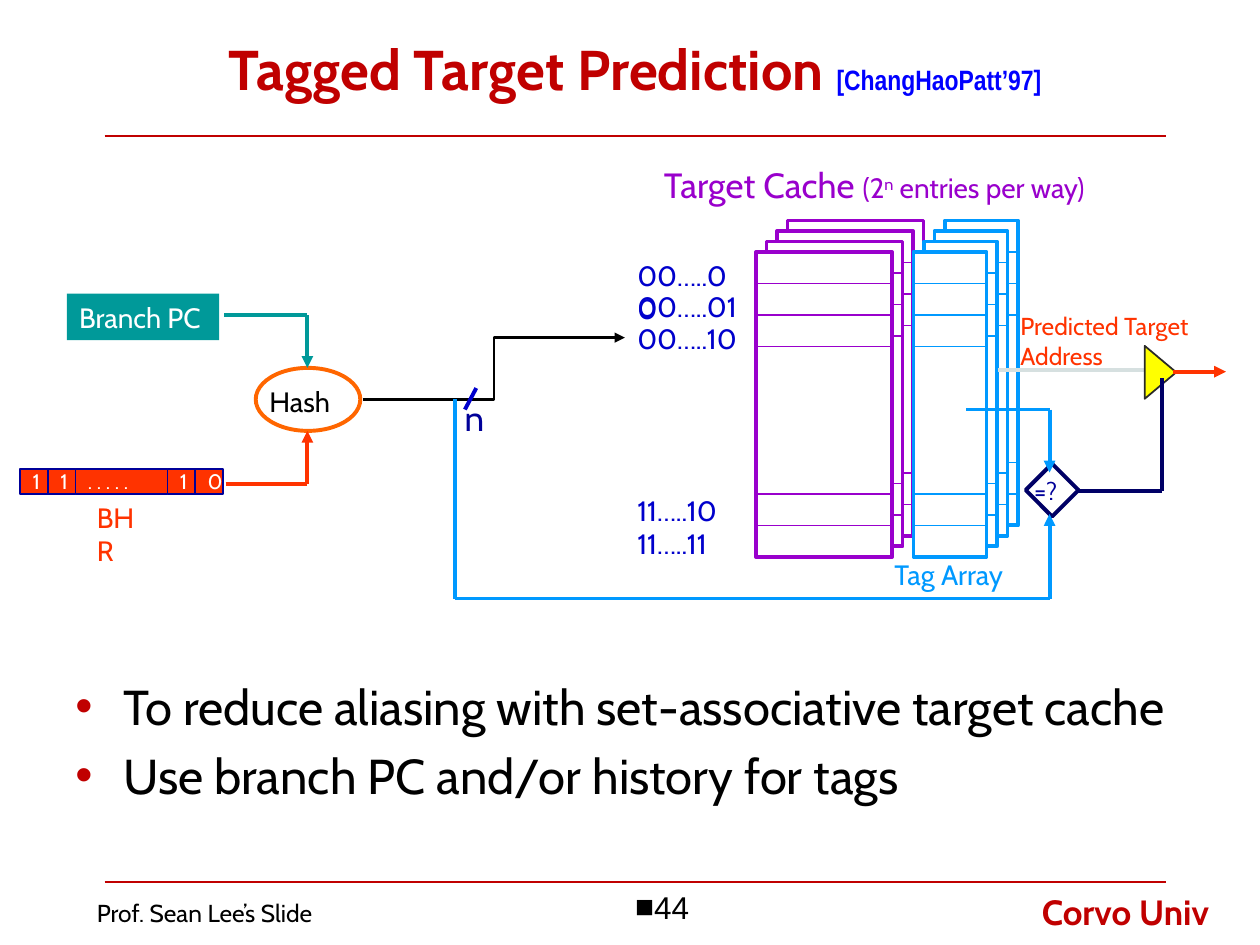
from lxml import etree
from pptx import Presentation
from pptx.dml.color import RGBColor
from pptx.enum.shapes import MSO_CONNECTOR as Route, MSO_SHAPE as Preset
from pptx.enum.text import MSO_ANCHOR as Anchor, MSO_AUTO_SIZE as AutoSize, PP_ALIGN as Align
from pptx.oxml.ns import qn
from pptx.util import Inches, Pt

RED, PURPLE, BLUE = "C00000", "9900CC", "0099FF"
ORANGE, TEAL, NAVY = "FF3300", "009999", "000066"
INDEX_BLUE, TEXT_BLUE = "0000CC", "000099"
BLACK, WHITE = "000000", "FFFFFF"


def rgb(value):
    return RGBColor.from_string(value)


def style(run, size, color, bold=False, font="Cabin"):
    run.font.size = Pt(size)
    run.font.name = font
    run.font.bold = bold
    run.font.color.rgb = rgb(color)


def add_bullet(paragraph, char, color, indent=0):
    props = paragraph._p.get_or_add_pPr()
    props.set("marL", str(Inches(indent)))
    props.set("indent", str(-Inches(indent)))
    bullet_color = etree.SubElement(props, qn("a:buClr"))
    etree.SubElement(bullet_color, qn("a:srgbClr"), val=color)
    etree.SubElement(props, qn("a:buFont"), typeface="Arial")
    etree.SubElement(props, qn("a:buChar"), char=char)


def add_label(slide, box, text, size, color, wrap=False, bold=False, font="Cabin"):
    label = slide.shapes.add_textbox(*map(Inches, box))
    frame = label.text_frame
    frame.text = text
    frame.word_wrap = wrap
    frame.auto_size = AutoSize.SHAPE_TO_FIT_TEXT
    for paragraph in frame.paragraphs:
        for run in paragraph.runs:
            style(run, size, color, bold, font)
    return frame


def add_block(shapes, preset, box, fill=None, line=None, width=2.25):
    block = shapes.add_shape(preset, *map(Inches, box))
    block.shadow.inherit = False
    if fill:
        block.fill.solid()
        block.fill.fore_color.rgb = rgb(fill)
    else:
        block.fill.background()
    if line:
        block.line.color.rgb = rgb(line)
        block.line.width = Pt(width)
    else:
        block.line.fill.background()
    return block


def fill_text(block, text, size, color):
    frame = block.text_frame
    frame.text = text
    frame.margin_right = 0
    frame.vertical_anchor = Anchor.MIDDLE
    frame.paragraphs[0].alignment = Align.LEFT
    style(frame.paragraphs[0].runs[0], size, color)


def add_wire(shapes, start, end, color, width=2.25, arrow=False, route=Route.STRAIGHT):
    wire = shapes.add_connector(route, *map(Inches, start + end))
    wire.line.color.rgb = rgb(color)
    wire.line.width = Pt(width)
    if arrow:
        etree.SubElement(wire.line._get_or_add_ln(), qn("a:tailEnd"), type="triangle")
    etree.SubElement(wire._element.spPr, qn("a:effectLst"))


def add_path(shapes, points, color, arrow=False):
    last = len(points) - 2
    for i, (start, end) in enumerate(zip(points, points[1:])):
        add_wire(shapes, start, end, color, arrow=arrow and i == last)


def add_title(slide):
    title = slide.shapes.title
    title.left, title.top, title.width, title.height = map(Inches, (0.83, 0.08, 8.42, 0.92))
    title.text_frame.vertical_anchor = Anchor.MIDDLE
    heading = title.text_frame.paragraphs[0]
    heading.alignment = Align.CENTER
    name, citation = heading.add_run(), heading.add_run()
    name.text, citation.text = "Tagged Target Prediction ", "[ChangHaoPatt’97]"
    style(name, 32, RED, True)
    style(citation, 16, "0000FF", True, "Arial Narrow")


def add_frame(slide):
    for y in (1.08, 7):
        add_wire(slide.shapes, (0.83, y), (9.25, y), RED, 1.5)
    add_label(slide, (8.17, 7.02, 1.74, 0.44), "Corvo Univ", 20, RED, bold=True)
    add_label(slide, (0.67, 7.08, 2.04, 0.34), "Prof. Sean Lee’s Slide", 14, BLACK)
    number = add_label(slide, (3.67, 7, 3.17, 0.5), "44", 18, BLACK, True, font="Arial")
    number.auto_size = AutoSize.NONE
    number.paragraphs[0].alignment = Align.CENTER
    add_bullet(number.paragraphs[0], "■", BLACK)


def add_way(slide, left, top):
    way = slide.shapes.add_group_shape().shapes
    for offset, width, color in ((0, 1.08, PURPLE), (1.25, 0.58, BLUE)):
        x = left + offset
        add_block(way, Preset.RECTANGLE, (x, top, width, 2.42), WHITE, color)
        for row in (0.25, 0.5, 0.75, 1.92, 2.17):
            add_wire(way, (x, top + row), (x + width, top + row), color, 1)


def add_target_cache(slide):
    for depth in range(4):
        add_way(slide, 6.25 - depth / 12, 1.75 + depth / 12)
    indexes = {"00…..00": 2, "00…..01": 2.25, "00…..10": 2.5, "11…..10": 3.87, "11…..11": 4.13}
    for index, y in indexes.items():
        add_label(slide, (4.96, y, 1.04, 0.37), index, 16, INDEX_BLUE)
    heading = add_label(slide, (5.17, 1.25, 4.33, 0.43), "Target Cache ", 20, PURPLE, True)
    for part in ("(2", "n", " entries per way)"):
        run = heading.paragraphs[0].add_run()
        run.text = part
        style(run, 16, PURPLE)
        if part == "n":
            run._r.get_or_add_rPr().set("baseline", "30000")
    add_label(slide, (7, 4.38, 1.14, 0.37), "Tag Array", 16, BLUE)


def add_history_register(slide):
    register = slide.shapes.add_group_shape().shapes
    x = 0.16
    for bit, width in (("1", 0.22), ("1", 0.22), (". . . . .", 0.73), ("1", 0.22), ("0", 0.22)):
        cell = add_block(register, Preset.RECTANGLE, (x, 3.72, width, 0.2), ORANGE, TEXT_BLUE, 1)
        fill_text(cell, bit, 12, WHITE)
        x += width
    add_label(slide, (0.67, 3.92, 0.62, 0.37), "BHR", 16, ORANGE)


def add_hash(slide):
    shapes = slide.shapes
    branch = add_block(shapes, Preset.RECTANGLE, (0.53, 2.33, 1.21, 0.37), TEAL)
    fill_text(branch, "Branch PC", 16, WHITE)
    add_block(shapes, Preset.OVAL, (2.03, 2.92, 0.83, 0.5), line="FF6600")
    add_label(slide, (2.04, 3, 0.69, 0.37), "Hash", 16, BLACK)
    add_path(shapes, [(1.78, 2.5), (2.44, 2.5), (2.44, 2.92)], TEAL, True)
    add_path(shapes, [(1.79, 3.84), (2.44, 3.84), (2.44, 3.42)], ORANGE, True)
    add_wire(shapes, (2.88, 3.17), (4.96, 2.68), BLACK, 1.5, True, Route.ELBOW)
    add_wire(shapes, (3.78, 3.08), (3.69, 3.25), INDEX_BLUE)
    add_label(slide, (3.59, 3.1, 0.37, 0.43), "n", 20, TEXT_BLUE)


def add_tag_check(slide):
    shapes = slide.shapes
    add_wire(shapes, (7.92, 2.94), (9.08, 2.94), "D6E0E0")
    add_label(slide, (8, 2.42, 2, 0.57), "Predicted Target Address", 14, ORANGE, True)
    add_block(shapes, Preset.DIAMOND, (8.14, 3.68, 0.42, 0.42), line=NAVY)
    add_label(slide, (8.11, 3.73, 0.44, 0.34), "=?", 14, TEXT_BLUE)
    add_path(shapes, [(3.61, 3.17), (3.61, 4.75), (8.33, 4.75), (8.33, 4.08)], BLUE, True)
    add_path(shapes, [(7.67, 3.25), (8.33, 3.25), (8.33, 3.75)], BLUE, True)
    gate = add_block(shapes, Preset.ISOSCELES_TRIANGLE, (9, 2.83, 0.42, 0.25), "FFFF00", "292929", 1)
    gate.rotation = 90
    add_wire(shapes, (9.31, 2.95), (9.73, 2.95), ORANGE, arrow=True)
    add_path(shapes, [(8.55, 3.9), (9.22, 3.9), (9.22, 3)], NAVY)


def add_points(slide):
    points = ("To reduce aliasing with set-associative target cache",
              "Use branch PC and/or history for tags")
    body = add_label(slide, (0.5, 5.32, 9.29, 1.52), "\n".join(points), 28, BLACK, True)
    body.auto_size = AutoSize.NONE
    body.paragraphs[1].space_before = Pt(5.6)
    for paragraph in body.paragraphs:
        add_bullet(paragraph, "•", RED, 0.38)


def main():
    deck = Presentation()
    deck.slide_width, deck.slide_height = Inches(10), Inches(7.5)
    slide = deck.slides.add_slide(deck.slide_layouts[5])
    add_title(slide)
    add_frame(slide)
    add_target_cache(slide)
    add_history_register(slide)
    add_hash(slide)
    add_tag_check(slide)
    add_points(slide)
    deck.save("out.pptx")


if __name__ == "__main__":
    main()
